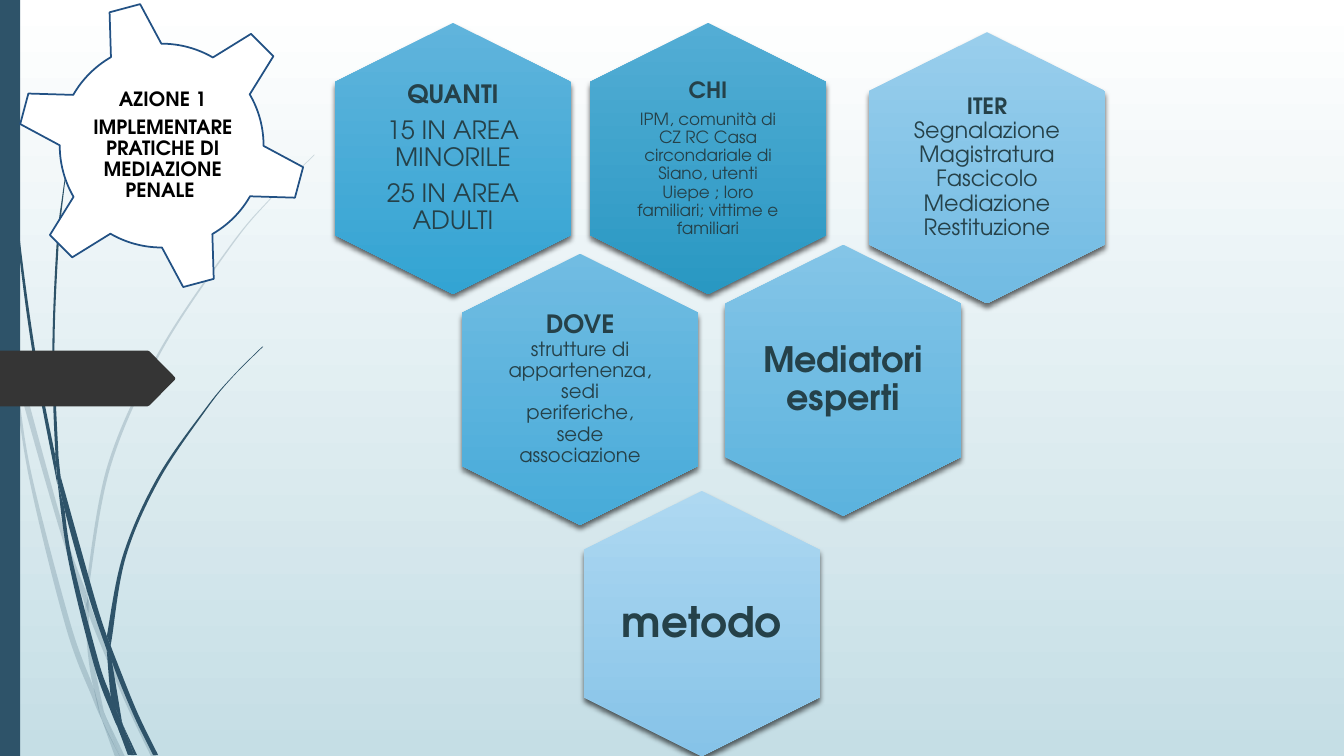
from lxml import etree
from pptx import Presentation
from pptx.dml.color import RGBColor
from pptx.enum.shapes import MSO_SHAPE as Preset
from pptx.enum.text import MSO_ANCHOR as Anchor, PP_ALIGN as Align
from pptx.oxml.ns import qn
from pptx.util import Pt

FONT = "TeX Gyre Adventor"
WHITE, BLACK = RGBColor(255, 255, 255), RGBColor(0, 0, 0)
MIST = RGBColor(0xC5, 0xDE, 0xE5)
NAVY = RGBColor(0x2E, 0x53, 0x69)
CHARCOAL = RGBColor(0x35, 0x35, 0x35)
GEAR_BLUE = RGBColor(0x22, 0x51, 0x84)
INK = RGBColor(0x25, 0x41, 0x49)

# Content: a paragraph is a list of runs (text, size, bold)
ACTION = [[("AZIONE 1", 14, True)],
          [("IMPLEMENTARE PRATICHE DI MEDIAZIONE PENALE ", 14, True)]]

# Hexagons: centre x, centre y, long side, text inset, gradient, paragraphs
HEXAGONS = [
    (505.8, 113.2, 193.7, 5, ("53ADD5", "2998C2"), [
        [("CHI", 16, True)],
        [("IPM, comunità di CZ RC Casa circondariale di Siano, utenti Uiepe ; "
          "loro familiari; vittime e familiari", 12, False)]]),
    (323.6, 113.2, 193.7, 0, ("60B4DC", "33A4D3"), [
        [("QUANTI", 18, True)],
        [("15 IN AREA MINORILE", 18, False)],
        [("25 IN AREA ADULTI", 18, False)]]),
    (414.4, 278.1, 193.7, 5, ("71BCE2", "47ABD9"), [
        [("DOVE ", 18, True),
         ("strutture di appartenenza, sedi periferiche, sede associazione", 14, False)]]),
    (602.3, 271.6, 193.7, 0, ("84C5E7", "5CB3DE"), [
        [("Mediatori esperti", 25, True)]]),
    (705, 119.8, 193.7, 5, ("99CEEC", "71BBE3"), [
        [("ITER ", 16, True),
         ("Segnalazione Magistratura Fascicolo Mediazione Restituzione", 16, False)]]),
    (501.3, 445.4, 189.4, 0, ("AED8F1", "86C3E8"), [
        [("metodo", 30, True)]]),
]
HEX_SHORT = 168.5
HEX_TEXT = (116, 133)

# Grass slivers: one edge, then the edge that leads back
FADED_GRASS = [
    ([(0, 203), (6.5, 231.8), (7.9, 252)], [(7.2, 247.7), (0, 215.3)]),
    ([(10.1, 248.4), (12.2, 270.7), (41.8, 375.8), (60.5, 431.3)],
     [(61.2, 421.9), (44.6, 374.4), (10.1, 248.4)]),
    ([(63.4, 429.1), (63.4, 439.2), (88.6, 499.7), (108, 540.5)],
     [(111.6, 540.5), (91.4, 498.2), (66.2, 437)]),
    ([(75.6, 511.9), (85.7, 540.5)], [(89.3, 540.5)]),
    ([(7.9, 252), (20.2, 338.4), (46.8, 447.1), (66.2, 499), (72.7, 514.1)],
     [(71.3, 509), (67, 491.8), (50.4, 445.7), (22.3, 337.7), (12.2, 270.7)]),
    ([(60.5, 431.3), (62.6, 465.1), (67, 491.8), (75.6, 511.9)],
     [(74.2, 508.3), (65.5, 465.1), (63.4, 439.2)]),
    ([(224.6, 110.2), (193, 141.8), (164.2, 175.7), (113.8, 250.6), (77, 331.9),
      (61.2, 420.5)],
     [(63.4, 429.1), (63.4, 420.5), (79.2, 332.6), (115.2, 251.3), (164.9, 176.4),
      (193, 142.6), (224.6, 110.9)]),
    ([(72.7, 514.1), (82.1, 540.5)], [(85.7, 540.5)]),
    ([(63.4, 437.8), (63.4, 429.1)], [(61.2, 421.9), (60.5, 431.3)]),
    ([(67, 491.8), (72.7, 514.1), (85.7, 540.5)], [(75.6, 511.9), (69.1, 498.2)]),
]
DARK_GRASS = [
    ([(2.2, 0), (2.9, 34.6), (5, 79.2), (12.2, 167.8), (23.8, 255.6), (41, 346.3)],
     [(39.6, 326.2), (25.9, 255.6), (13.7, 167), (5.8, 78.5), (3.6, 34.6), (2.9, 0)]),
    ([(43.2, 339.8), (46.1, 363.6), (63.4, 426.2), (76.3, 464.4)],
     [(76.3, 454.3), (67, 424.8), (43.2, 339.8)]),
    ([(79.2, 461.5), (79.9, 472.3), (95, 509.8), (109.4, 539.3)],
     [(113, 539.3), (97.9, 508.3), (81.4, 467.3)]),
    ([(41, 343.4), (49, 401), (67, 474.5), (79.9, 509.8), (84.2, 519.8)],
     [(83.5, 516.2), (79.2, 497.5), (70.6, 473), (51.8, 400.3), (46.1, 363.6)]),
    ([(50.4, 101.5), (44.6, 139), (40.3, 176.4), (37.4, 251.3), (39.6, 323.3),
      (43.2, 339.8)],
     [(41.8, 326.2), (38.9, 251.3), (41.8, 176.4), (45.4, 139), (50.4, 101.5)]),
    ([(87.8, 517.7), (95.8, 539.3)], [(97.9, 539.3)]),
    ([(41, 343.4), (46.1, 363.6)], [(43.2, 339.8), (39.6, 323.3), (39.6, 326.2)]),
    ([(187.2, 247.7), (166.3, 268.6), (146.9, 291.6), (112.3, 341.3), (87.8, 396.7),
      (76.3, 454.3)],
     [(79.2, 461.5), (79.9, 455.8), (90, 397.4), (113.8, 342.7), (147.6, 292.3),
      (166.3, 269.3), (187.9, 247.7)]),
    ([(84.2, 519.8), (91.4, 539.3)], [(94.3, 539.3)]),
    ([(76.3, 464.4), (79.2, 497.5), (83.5, 508.3), (87.8, 517.7)],
     [(87.1, 515.5), (79.9, 472.3), (78.5, 468.7)]),
    ([(76.3, 464.4), (79.9, 472.3)], [(79.2, 461.5), (76.3, 454.3)]),
    ([(79.2, 497.5), (84.2, 519.8), (93.6, 539.3)],
     [(95.8, 539.3), (87.8, 517.7), (83.5, 508.3)]),
]
POINTER = [(0, 250.4), (105.5, 250.4), (106.8, 251), (124.8, 269.3), (125.2, 270.3),
           (124.8, 271.4), (106.8, 289.6), (105.5, 290.2), (0, 290.2)]


def bend(knots):
    """Cubic control points of a Catmull-Rom curve, three per segment."""
    padded = [knots[0], *knots, knots[-1]]
    controls = []
    for a, b, c, d in zip(padded, padded[1:], padded[2:], padded[3:]):
        controls += [tuple(q + (r - p) / 6 for p, q, r in zip(a, b, c)),
                     tuple(r - (s - q) / 6 for q, r, s in zip(b, c, d)), c]
    return controls


def paint(shape, color):
    shape.shadow.inherit = False
    shape.fill.solid()
    shape.fill.fore_color.rgb = color
    shape.line.fill.background()
    return shape


def add_outline(points, color):
    fine = [(x * 100, y * 100) for x, y in points]
    builder = slide.shapes.build_freeform(*fine[0], scale=Pt(1) / 100)
    builder.add_line_segments(fine[1:])
    return paint(builder.convert_to_shape(), color)


def add_sliver(edge, way_back, color):
    corner = [edge[-1], way_back[0]]
    sliver = add_outline([edge[0], *bend(edge), *bend(corner), *bend(way_back)], color)
    # Each three straight steps become one cubic curve
    steps = list(sliver._element.iter(qn("a:lnTo")))
    for first, second, third in zip(steps[::3], steps[1::3], steps[2::3]):
        first.tag = qn("a:cubicBezTo")
        for step in (second, third):
            first.append(step[0])
            step.getparent().remove(step)
    return sliver


def add_preset(kind, left, top, width, height):
    return slide.shapes.add_shape(kind, Pt(left), Pt(top), Pt(width), Pt(height))


def shade(fill, top_color, bottom_color):
    fill.gradient()
    fill.gradient_angle = 270
    for stop, color, position in zip(fill.gradient_stops, (top_color, bottom_color), (0, 1)):
        stop.color.rgb = color
        stop.position = position


def drop_shadow(shape):
    effects = shape._element.spPr.find(qn("a:effectLst"))
    shadow = etree.SubElement(effects, qn("a:outerShdw"), blurRad=str(Pt(4)),
                              dist=str(Pt(3)), dir="5400000", rotWithShape="0")
    black = etree.SubElement(shadow, qn("a:srgbClr"), val="000000")
    etree.SubElement(black, qn("a:alpha"), val="60000")


def add_words(center_x, center_y, width, height, inset, paragraphs, color):
    box = slide.shapes.add_textbox(Pt(center_x - width / 2), Pt(center_y - height / 2),
                                   Pt(width), Pt(height))
    frame = box.text_frame
    frame.word_wrap = True
    frame.vertical_anchor = Anchor.MIDDLE
    frame.margin_left = frame.margin_right = Pt(inset)
    frame.margin_top = frame.margin_bottom = Pt(inset)
    for i, runs in enumerate(paragraphs):
        paragraph = frame.add_paragraph() if i else frame.paragraphs[0]
        paragraph.alignment = Align.CENTER
        paragraph.line_spacing = 0.9
        paragraph.space_after = Pt(0.35 * runs[0][1])
        for text, size, bold in runs:
            run = paragraph.add_run()
            run.text = text
            run.font.name, run.font.size, run.font.bold = FONT, Pt(size), bold
            run.font.color.rgb = color


deck = Presentation()
deck.slide_width, deck.slide_height = Pt(960), Pt(540)
slide = deck.slides.add_slide(deck.slide_layouts[6])
shade(slide.background.fill, WHITE, MIST)

# Grass, side band and pointer
for edges in FADED_GRASS:
    tint = add_sliver(*edges, NAVY)._element.spPr.find(qn("a:solidFill"))[0]
    etree.SubElement(tint, qn("a:alpha"), val="20000")
for edges in DARK_GRASS:
    add_sliver(*edges, NAVY)
paint(add_preset(Preset.RECTANGLE, 0, 0, 14.4, 540), NAVY)
add_outline(POINTER, CHARCOAL)

# Gear with the action title
gear = paint(add_preset(Preset.GEAR_6, 11.5, 0, 208, 208), WHITE)
gear.rotation = 345
gear.line.color.rgb = GEAR_BLUE
gear.line.width = Pt(1.25)
add_words(116.3, 104.1, 129, 116.6, 1.4, ACTION, BLACK)

# Honeycomb
for x, y, length, inset, tones, paragraphs in HEXAGONS:
    cell = paint(add_preset(Preset.HEXAGON, x - length / 2, y - HEX_SHORT / 2,
                            length, HEX_SHORT), WHITE)
    cell.rotation = 90
    cell.adjustments[0] = 0.25
    shade(cell.fill, *map(RGBColor.from_string, tones))
    cell._element.spPr.find(qn("a:gradFill")).set("rotWithShape", "0")
    drop_shadow(cell)
    add_words(x, y, *HEX_TEXT, inset, paragraphs, INK)

deck.save("out.pptx")
